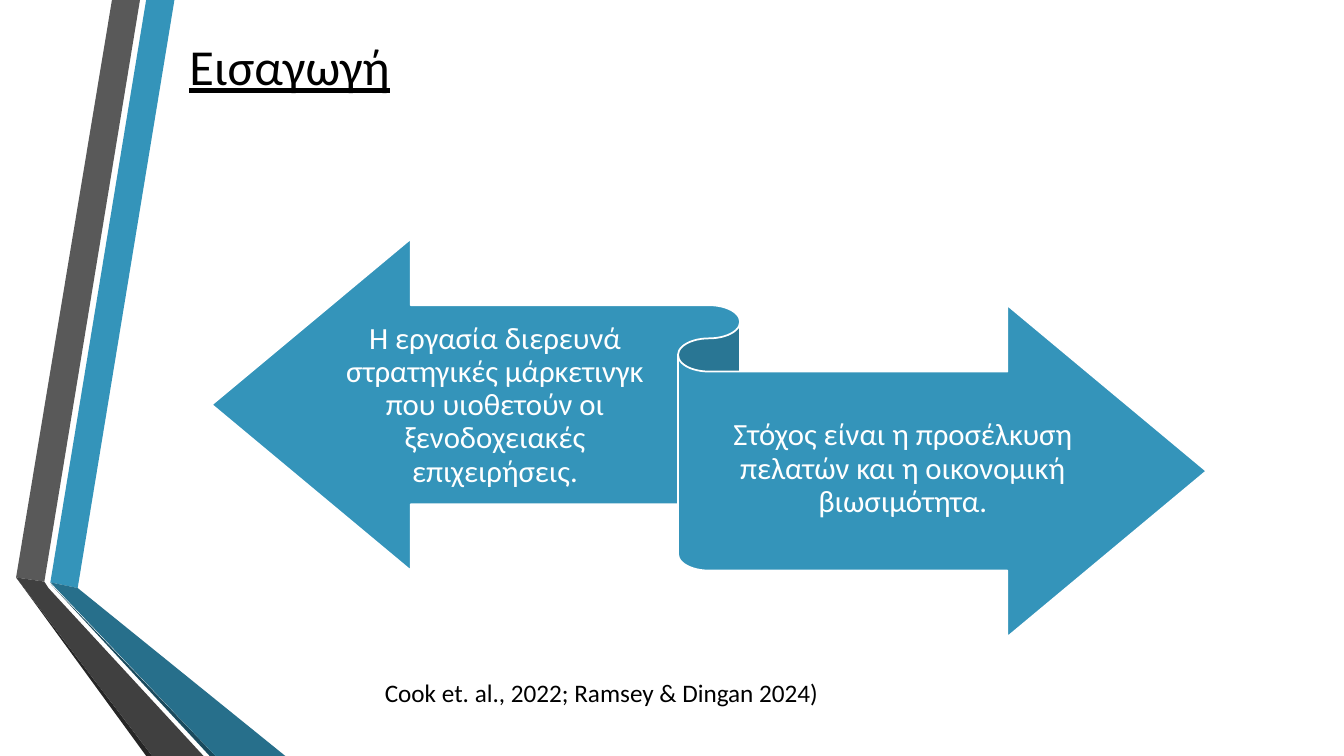
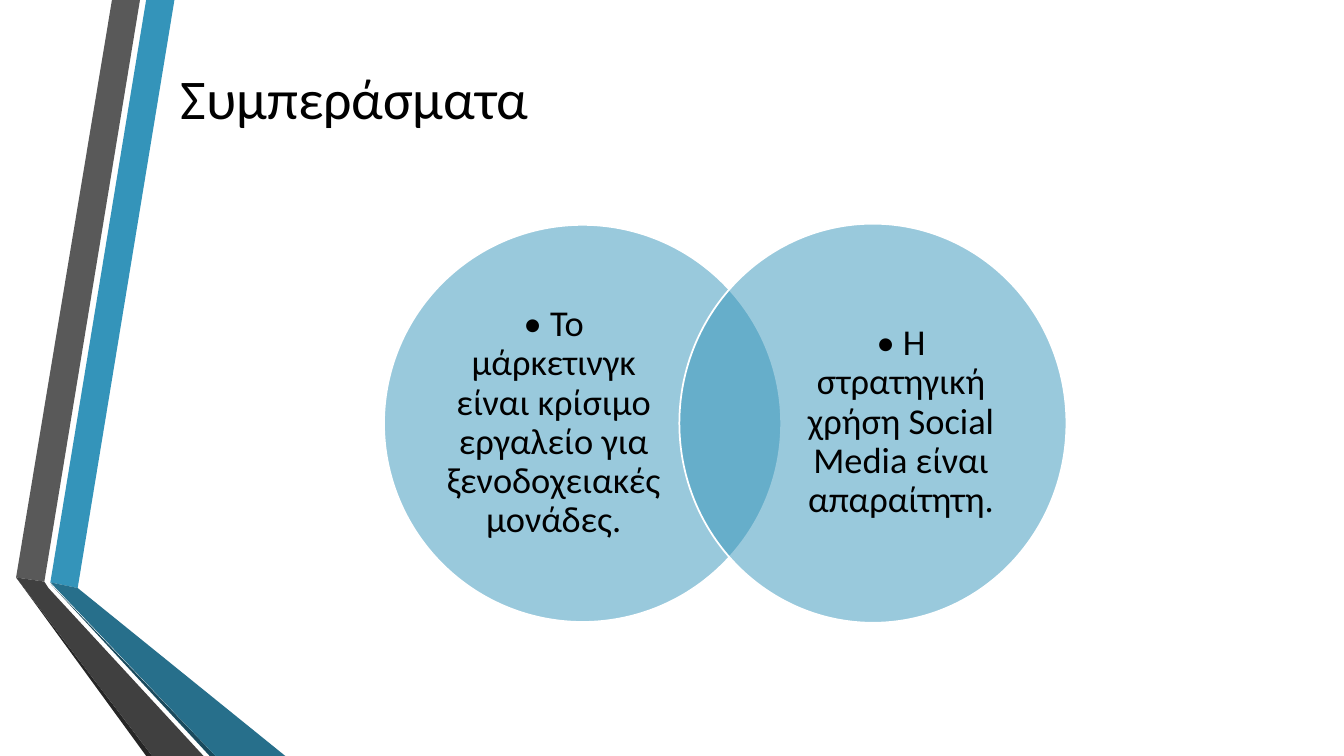
from lxml.etree import SubElement
from pptx import Presentation
from pptx.dml.color import RGBColor
from pptx.enum.shapes import MSO_SHAPE
from pptx.enum.text import MSO_ANCHOR, MSO_AUTO_SIZE, PP_ALIGN
from pptx.oxml.ns import qn
from pptx.util import Pt

FONT = "Calibri"
BLACK = RGBColor(0x00, 0x00, 0x00)
WHITE = RGBColor(0xFF, 0xFF, 0xFF)
BLUE = RGBColor(0x34, 0x94, 0xBA)
DEEP_BLUE = RGBColor(0x27, 0x6F, 0x8B)
NAVY = RGBColor(0x1A, 0x4A, 0x5D)
GREY = RGBColor(0x59, 0x59, 0x59)
DARK_GREY = RGBColor(0x40, 0x40, 0x40)
CHARCOAL = RGBColor(0x26, 0x26, 0x26)

WIDTH, HEIGHT = 960, 540

# Folded bands at the left edge: colour and outline, back to front
BANDS = [
    (BLUE, [(36, 416), (55.5, 420), (124.6, 0), (104.4, 0)]),
    (GREY, [(100, 0), (80, 0), (11.5, 412.5), (31.7, 415.5)]),
    (CHARCOAL, [(11.5, 412.5), (104.4, HEIGHT), (108.7, HEIGHT)]),
    (NAVY, [(36, 417), (149.8, HEIGHT), (154, HEIGHT)]),
    (DEEP_BLUE, [(36, 416), (154, HEIGHT), (203.8, HEIGHT), (55.5, 420)]),
    (DARK_GREY, [(145.4, HEIGHT), (34.6, 420), (31.7, 415.5), (11.5, 412.5), (108.7, HEIGHT)]),
]

# Boxes are (left, top, width, height)
INTRO_TITLE = ("Εισαγωγή", (128, 8.6, 789, 75.6), 36)
RIBBON = (151.2, 170.6, 710.6, 284.4)
RIBBON_TEXTS = [
    ("Η εργασία διερευνά στρατηγικές μάρκετινγκ που υιοθετούν οι ξενοδοχειακές επιχειρήσεις.",
     (236.2, 220.3, 234.7, 139)),
    ("Στόχος είναι η προσέλκυση πελατών και η οικονομική βιωσιμότητα.",
     (506.2, 265.7, 277.2, 139)),
]
CITATION = ("Cook et. al., 2022; Ramsey & Dingan 2024)", (267.8, 480.2, 343.4, 28.8))

CONCLUSION_TITLE = ("Συμπεράσματα", (121.7, 0, 789, 138.2), 40)
# Text, circle box, text box
CIRCLES = [
    ("• Το μάρκετινγκ είναι κρίσιμο εργαλείο για ξενοδοχειακές μονάδες.",
     (274.3, 160.6, 283.7, 283.7), (313.9, 193.7, 163.4, 216.7)),
    ("• Η στρατηγική χρήση Social Media είναι απαραίτητη.",
     (485.3, 159.8, 276.5, 285.1), (563.8, 193, 159.8, 217.4)),
]


def points(box):
    return [Pt(length) for length in box]


def style_text(frame, text, size, color):
    frame.text = text
    frame.word_wrap = True
    font = frame.paragraphs[0].runs[0].font
    font.name, font.size, font.color.rgb = FONT, Pt(size), color
    return font


def add_bands(slide, layout):
    """Draw the bands and place them on the layout, behind its placeholders."""
    for depth, (color, outline) in enumerate(BANDS):
        corners = [(Pt(x), Pt(y)) for x, y in outline]
        builder = slide.shapes.build_freeform(*corners[0])
        builder.add_line_segments(corners[1:], close=True)
        band = builder.convert_to_shape()
        band.fill.solid()
        band.fill.fore_color.rgb = color
        band.line.fill.background()
        band.shadow.inherit = False
        layout.shapes.element.insert(2 + depth, band.element)


def set_title(slide, text, box, size):
    title = slide.shapes.title
    title.left, title.top, title.width, title.height = points(box)
    frame = title.text_frame
    font = style_text(frame, text, size, BLACK)
    frame.auto_size = MSO_AUTO_SIZE.NONE
    frame.vertical_anchor = MSO_ANCHOR.MIDDLE
    frame.paragraphs[0].alignment = PP_ALIGN.LEFT
    return font


def add_blue_shape(slide, kind, box, opacity=100):
    shape = slide.shapes.add_shape(kind, *points(box))
    shape.shadow.inherit = False
    shape.fill.solid()
    shape.fill.fore_color.rgb = BLUE
    shape.line.color.rgb = WHITE
    shape.line.width = Pt(1.25)
    if opacity < 100:
        fill_color = next(shape.element.iter(qn("a:srgbClr")))
        SubElement(fill_color, qn("a:alpha")).set("val", str(opacity * 1000))


def add_centred_text(slide, text, box, size, color, inset):
    """Centre text in a box with the given top and bottom inset."""
    frame = slide.shapes.add_textbox(*points(box)).text_frame
    style_text(frame, text, size, color)
    frame.margin_left = frame.margin_right = 0
    frame.margin_top = frame.margin_bottom = Pt(inset)
    frame.vertical_anchor = MSO_ANCHOR.MIDDLE
    frame.paragraphs[0].alignment = PP_ALIGN.CENTER
    frame.paragraphs[0].line_spacing = 0.9


def build_intro(slide):
    set_title(slide, *INTRO_TITLE).underline = True
    add_blue_shape(slide, MSO_SHAPE.LEFT_RIGHT_RIBBON, RIBBON)
    for text, box in RIBBON_TEXTS:
        add_centred_text(slide, text, box, 22, WHITE, 6.5)
    text, box = CITATION
    citation = slide.shapes.add_textbox(*points(box))
    style_text(citation.text_frame, text, 18, BLACK)


def build_conclusions(slide):
    set_title(slide, *CONCLUSION_TITLE)
    for text, circle, text_box in CIRCLES:
        add_blue_shape(slide, MSO_SHAPE.OVAL, circle, opacity=50)
        add_centred_text(slide, text, text_box, 26, BLACK, 0)


def main():
    deck = Presentation()
    deck.slide_width, deck.slide_height = Pt(WIDTH), Pt(HEIGHT)
    layout = deck.slide_layouts[5]
    intro = deck.slides.add_slide(layout)
    add_bands(intro, layout)
    build_intro(intro)
    build_conclusions(deck.slides.add_slide(layout))
    deck.save("out.pptx")


if __name__ == "__main__":
    main()
